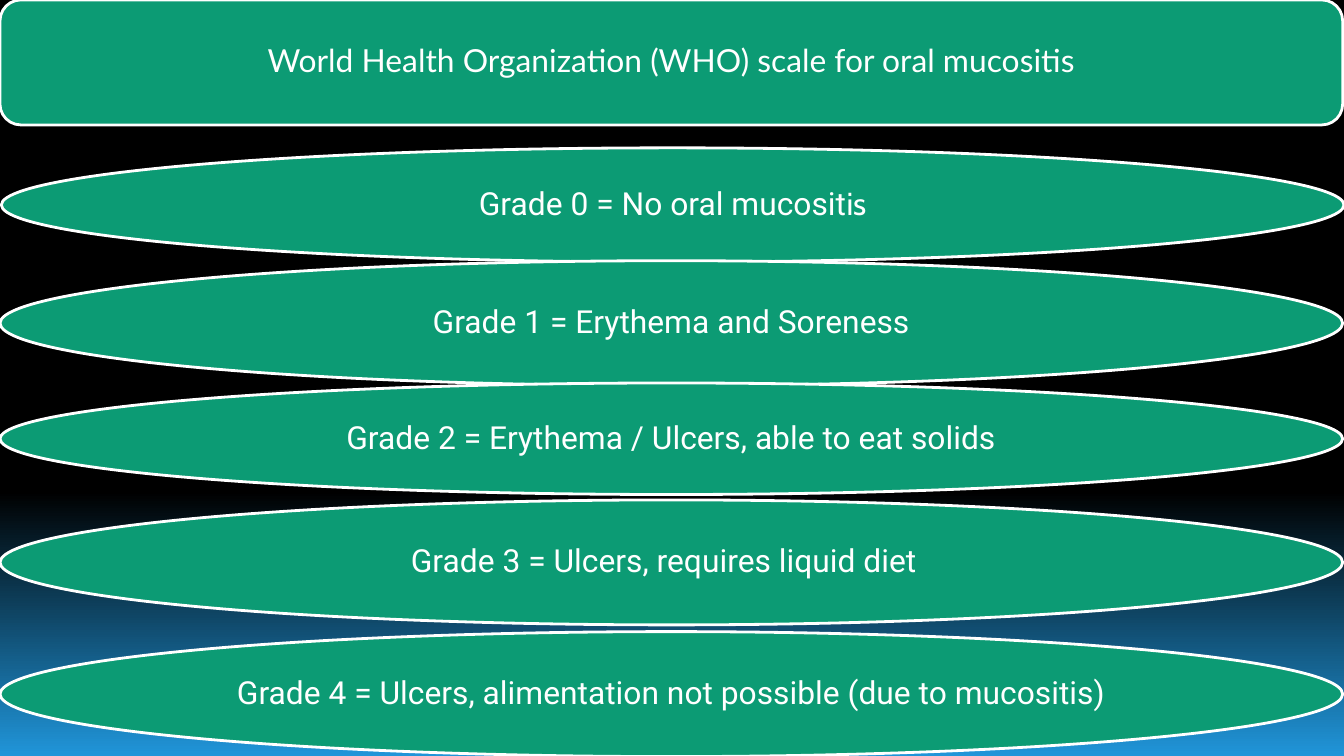
from dataclasses import dataclass

from pptx import Presentation
from pptx.dml.color import RGBColor
from pptx.enum.shapes import MSO_SHAPE
from pptx.enum.text import MSO_ANCHOR, MSO_AUTO_SIZE, PP_ALIGN
from pptx.util import Inches, Pt

ROUND_RECT = MSO_SHAPE.ROUNDED_RECTANGLE
OVAL = MSO_SHAPE.OVAL
MIDDLE = MSO_ANCHOR.MIDDLE
CENTER = PP_ALIGN.CENTER
NO_FIT = MSO_AUTO_SIZE.NONE
TITLE_ONLY = 5


@dataclass(frozen=True)
class Theme:
    green: RGBColor = RGBColor(0x0C, 0x9B, 0x74)
    white: RGBColor = RGBColor(0xFF, 0xFF, 0xFF)
    black: RGBColor = RGBColor(0, 0, 0)
    blue: RGBColor = RGBColor(0x20, 0x95, 0xD9)
    size: Pt = Pt(17)
    line: Pt = Pt(1.5)
    title_font: str = "Lato"
    body_font: str = "Roboto"
    accent_font: str = "Cabin"


THEME = Theme()
SIDE = 0.07
FRAME = {
    "word_wrap": True,
    "auto_size": NO_FIT,
    "vertical_anchor": MIDDLE,
    "margin_left": Inches(SIDE),
    "margin_top": Inches(0.04),
    "margin_bottom": Inches(0.04),
}
PARAGRAPH = {"alignment": CENTER, "line_spacing": 0.9}

TITLE = "World Health Organization (WHO) scale for oral mucositis"
GRADES = [
    ((0.01, 1.1, 9.99, 0.85), SIDE,
     [("Grade 0 = No oral mucosit", THEME.body_font), ("is", THEME.accent_font)]),
    ((0, 1.94, 9.99, 0.93), SIDE,
     [("Grade 1 = Erythema and Soreness", THEME.body_font)]),
    ((0, 2.85, 9.99, 0.83), SIDE,
     [("Grade 2 = Erythema / Ulcers, able to eat solids", THEME.body_font)]),
    ((0, 3.72, 9.99, 0.93), 0.18,
     [("Grade 3 = Ulcers, requires liquid diet", THEME.body_font)]),
    ((0, 4.7, 9.99, 0.93), SIDE,
     [("Grade 4 = Ulcers, alimentation not possible (due to mucositis)",
       THEME.body_font)]),
]


def set_attrs(obj, values):
    for name, value in values.items():
        setattr(obj, name, value)


def write(sp, runs, right=SIDE):
    tf = sp.text_frame
    set_attrs(tf, FRAME | {"margin_right": Inches(right)})
    p = tf.paragraphs[0]
    set_attrs(p, PARAGRAPH)
    for text, font in runs:
        r = p.add_run()
        r.text = text
        set_attrs(r.font, {"name": font, "size": THEME.size, "bold": False})
        r.font.color.rgb = THEME.white


def add_panel(s, kind, box):
    sp = s.shapes.add_shape(kind, *map(Inches, box))
    sp.shadow.inherit = False
    sp.fill.solid()
    sp.fill.fore_color.rgb = THEME.green
    sp.line.color.rgb = THEME.white
    sp.line.width = THEME.line
    return sp


def add_background(s):
    fill = s.background.fill
    fill.gradient()
    fill.gradient_angle = 270
    stops = ((0.65, THEME.black), (1, THEME.blue))
    for stop, (position, color) in zip(fill.gradient_stops, stops):
        stop.position = position
        stop.color.rgb = color


def add_header(s, box, pad=0.05):
    bar = add_panel(s, ROUND_RECT, box)
    left, top, width, height = box
    title = s.shapes.title
    set_attrs(title, {
        "left": Inches(left + pad),
        "top": Inches(top + pad),
        "width": Inches(width - 2 * pad),
        "height": Inches(height - 2 * pad),
    })
    write(title, [(TITLE, THEME.title_font)])
    bar._element.addnext(title._element)


def add_grade(s, box, right, runs):
    write(add_panel(s, OVAL, box), runs, right)


def main():
    prs = Presentation()
    prs.slide_width = Inches(10)
    prs.slide_height = prs.slide_width * 9 // 16
    s = prs.slides.add_slide(prs.slide_layouts[TITLE_ONLY])
    add_background(s)
    add_header(s, (0, 0, 9.99, 0.93))
    for box, right, runs in GRADES:
        add_grade(s, box, right, runs)
    prs.save("out.pptx")


if __name__ == "__main__":
    main()
